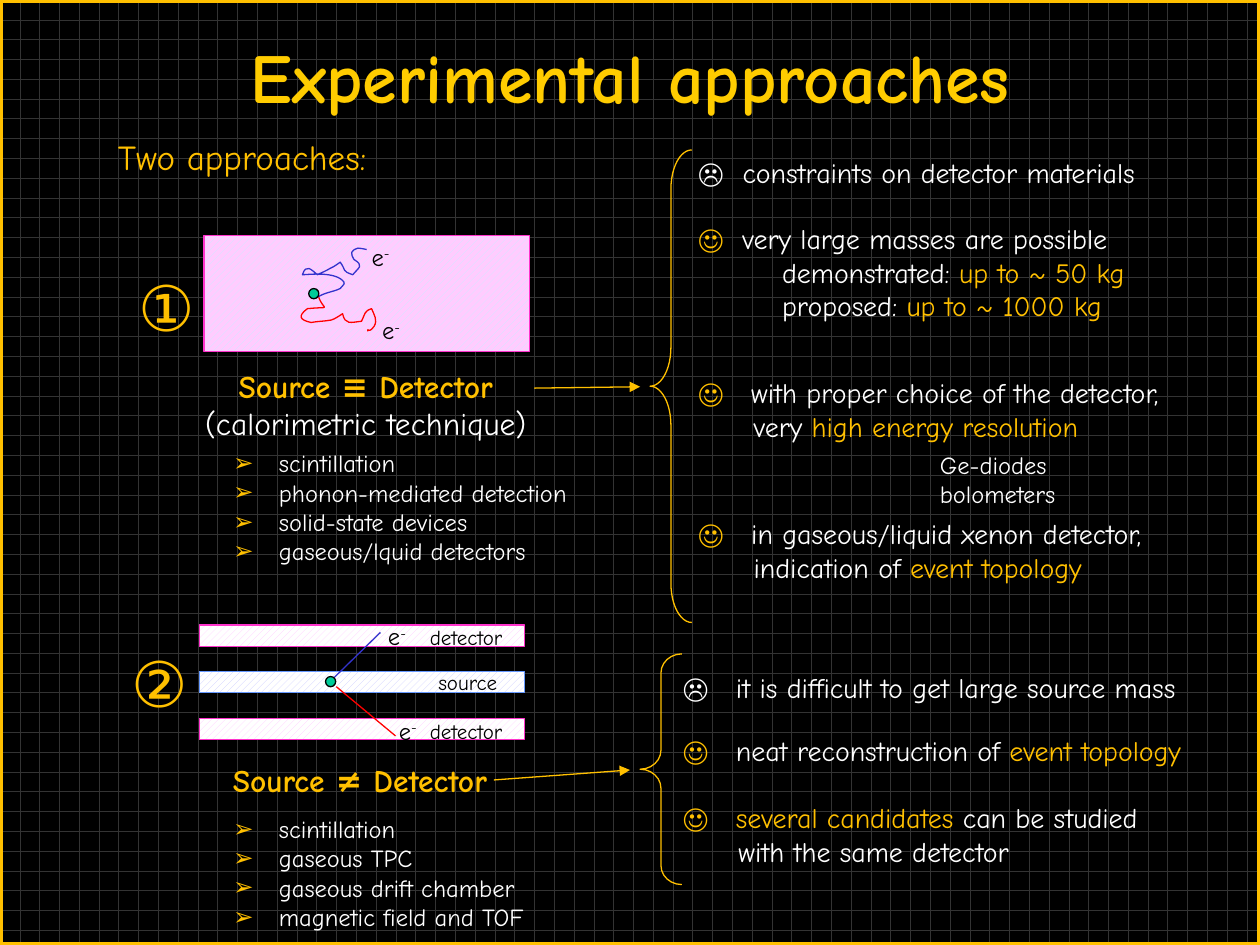
from lxml.etree import SubElement
from pptx import Presentation
from pptx.dml.color import RGBColor
from pptx.enum.dml import MSO_PATTERN
from pptx.enum.shapes import MSO_CONNECTOR, MSO_SHAPE
from pptx.enum.text import MSO_ANCHOR, MSO_AUTO_SIZE, PP_ALIGN
from pptx.oxml.ns import qn
from pptx.util import Pt

GOLD, WHITE, BLACK = "FFC000", "FFFFFF", "000000"
BLUE, RED, PINK, GREEN = "3333CC", "FF0000", "FF33CC", "00CC99"
FONT = "Comic Neue"

TITLE = "Experimental approaches"
TECHNIQUES = [
    ((126, 252.5, 214, 75), ["scintillation", "phonon-mediated detection",
                             "solid-state devices", "gaseous/lquid detectors"]),
    ((126, 461.5, 189, 75), ["scintillation", "gaseous TPC",
                             "gaseous drift chamber", "magnetic field and TOF"]),
]
HAPPY, SAD = ("☺\t", GOLD), ("☹\t", WHITE)
REMARKS = [
    ((391.9, 85.5, 292, 27), 25.3, [(0, [SAD, ("constraints on detector materials", WHITE)])]),
    ((391.9, 123.1, 271, 66), 25.3, [
        (0, [HAPPY, ("very large masses are possible", WHITE)]),
        (22.7, [("demonstrated: ", WHITE), ("up to ~ 50 kg", GOLD)]),
        (22.7, [("proposed: ", WHITE), ("up to ~ 1000 kg", GOLD)])]),
    ((391.9, 211, 311, 46), 30.3, [
        (0, [HAPPY, ("with proper choice of the detector,", WHITE)]),
        (1.4, [("very ", WHITE), ("high energy resolution", GOLD)])]),
    ((391.9, 291.6, 292, 46), 30.3, [
        (0, [HAPPY, ("in gaseous/liquid xenon detector,", WHITE)]),
        (1.4, [("indication of ", WHITE), ("event topology", GOLD)])]),
    ((383.2, 379.4, 330, 27), 30.3, [
        (0, [SAD, ("it is difficult to get large source mass", WHITE)])]),
    ((383.2, 415.4, 327, 27), 30.3, [
        (0, [HAPPY, ("neat reconstruction of ", WHITE), ("event topology", GOLD)])]),
    ((383.2, 453.9, 302, 46), 30.3, [
        (0, [HAPPY, ("several candidates ", GOLD), ("can be studied", WHITE)]),
        (1.4, [("with the same detector", WHITE)])]),
]
LABELS = [
    ((60.3, 74, 171, 32), 20, GOLD, ["Two approaches:"]),
    ((72, 149.8, 47, 50), 36, GOLD, ["①"]),
    ((68, 365, 47, 50), 36, GOLD, ["②"]),
    ((530, 253.4, 89, 41), 14, WHITE, ["Ge-diodes", "bolometers"]),
]
ELECTRONS = [(205.2, 134.6), (211.2, 176.4), (214.6, 351.4), (220.8, 405.4)]
SLABS = [("detector", 238.5, -3.6, "FFCCFF", PINK),
         ("source", 243.4, -4.8, "CCCCFF", "6699FF"),
         ("detector", 238.5, -3.6, "FFCCFF", PINK)]
SLAB_LEFT, SLAB_TOP, SLAB_PITCH, SLAB_WIDTH, SLAB_HEIGHT = 113.8, 357.1, 26.65, 185.8, 12.2
BRACES = [((371.5, 85.7, 23.8, 270), 0.938), ((365.8, 373.7, 23.8, 131.8), 0.458)]
LINES = [((305.3, 221.8), (365.8, 221), GOLD, True),
         ((282.2, 445.7), (360, 440), GOLD, True),
         ((188.6, 389.5), (217.4, 361.4), BLUE, False),
         ((192.2, 392.4), (226, 420.5), RED, False)]
DECAY_POINTS = [(176.4, 164.9), (186, 386.6)]
TRACKS = [
    (BLUE, [(181.4, 169.9),
            (185.8, 167), (190.1, 167), (194.4, 164.9),
            (195.1, 163.4), (197.3, 162.7), (196.6, 161.3),
            (192.2, 154.8), (175.7, 157), (172.8, 157),
            (175, 150.5), (177.8, 154.1), (181.4, 157),
            (184.3, 155.5), (185, 155.5), (188.6, 153.4),
            (190.8, 152.6), (194.4, 149.8), (194.4, 149.8),
            (198, 154.8), (195.1, 154.8), (201.6, 157),
            (205.2, 152.6), (208.1, 151.9), (202.3, 148.3),
            (200.2, 144.7), (200.2, 143.3), (204.5, 141.8),
            (205.9, 141.8), (209.5, 142.6), (209.5, 142.6)]),
    (RED, [(182.2, 169.9),
           (185, 177.8), (190.1, 175), (175.7, 176.4),
           (169.9, 180.7), (171.4, 182.9), (177.8, 184.3),
           (181.4, 183.6), (185.8, 183.6), (189.4, 182.9),
           (191.5, 182.2), (193.7, 180.7), (195.8, 179.3),
           (197.3, 185.8), (200.2, 184.3), (206.6, 183.6),
           (208.8, 179.3), (208.1, 177.8), (212.4, 176.4),
           (213.8, 180), (216, 182.9), (213.8, 186.5),
           (210.2, 191.5), (210.2, 186.5), (210.2, 189.4)]),
]


def color(hex_text):
    return RGBColor.from_string(hex_text)


def points(values):
    return [Pt(value) for value in values]


def pattern(fill, kind, fore, back):
    fill.patterned()
    fill.pattern = kind
    fill.fore_color.rgb, fill.back_color.rgb = color(fore), color(back)


def outline(item, hex_text, width=0.75):
    item.line.color.rgb = color(hex_text)
    item.line.width = Pt(width)


def preset(kind, box, line, width=0.75):
    item = slide.shapes.add_shape(kind, *points(box))
    item.shadow.inherit = False
    item.fill.background()
    outline(item, line, width)
    return item


def place(holder, box):
    holder.left, holder.top, holder.width, holder.height = points(box)
    frame = holder.text_frame
    settings = {"word_wrap": True, "auto_size": MSO_AUTO_SIZE.NONE,
                "vertical_anchor": MSO_ANCHOR.TOP}
    for key, value in settings.items():
        setattr(frame, key, value)
    return frame


def write(frame, size, paragraphs, align=PP_ALIGN.LEFT, bullet=None):
    for index, (margin, hanging, runs) in enumerate(paragraphs):
        paragraph = frame.add_paragraph() if index else frame.paragraphs[0]
        paragraph.alignment = align
        paragraph.space_before = Pt(0)
        properties = paragraph._p.get_or_add_pPr()
        properties.set("marL", str(Pt(margin)))
        properties.set("indent", str(-Pt(hanging)))
        if bullet:
            bullet_color = SubElement(properties, qn("a:buClr"))
            SubElement(bullet_color, qn("a:srgbClr"), val=GOLD)
            SubElement(properties, qn("a:buChar"), char=bullet)
        else:
            SubElement(properties, qn("a:buNone"))
        for text, hex_text, *bold in runs:
            run = paragraph.add_run()
            run.text = text
            settings = {"name": FONT, "size": Pt(size), "bold": bool(bold)}
            for key, value in settings.items():
                setattr(run.font, key, value)
            run.font.color.rgb = color(hex_text)


def label(box, size, paragraphs, align=PP_ALIGN.LEFT):
    frame = place(slide.shapes.add_textbox(*points(box)), box)
    write(frame, size, [(0, 0, runs) for runs in paragraphs], align)
    return frame


def draw_track(hex_text, track):
    start, *rest = [points(point) for point in track]
    builder = slide.shapes.build_freeform(*start, scale=1.0)
    builder.add_line_segments(rest[2::3], close=False)
    electron_track = builder.convert_to_shape()
    electron_track.shadow.inherit = False
    electron_track.fill.background()
    outline(electron_track, hex_text)
    left, top = electron_track.left, electron_track.top
    segments = list(electron_track._element.iter(qn("a:lnTo")))
    for index, segment in enumerate(segments):
        curve = segment.makeelement(qn("a:cubicBezTo"))
        for x, y in rest[3 * index:3 * index + 3]:
            SubElement(curve, qn("a:pt"), x=str(x - left), y=str(y - top))
        segment.getparent().replace(segment, curve)


deck = Presentation()
deck.slide_width, deck.slide_height = Pt(720), Pt(540)
slide = deck.slides.add_slide(deck.slide_layouts[3])
pattern(slide.background.fill, MSO_PATTERN.DOTTED_GRID, "333333", BLACK)
title, *technique_lists = slide.placeholders

write(place(title, (37.2, 15.8, 645.8, 90)), 40,
      [(0, 0, [(TITLE, "FFCC00", True)])], PP_ALIGN.CENTER)
for holder, (box, techniques) in zip(technique_lists, TECHNIQUES):
    write(place(holder, box), 14,
          [(26.2, 26.2, [(technique, WHITE)]) for technique in techniques], bullet="➢")

preset(MSO_SHAPE.RECTANGLE, (0, 0, 720, 540), GOLD, 3)
calorimeter = preset(MSO_SHAPE.RECTANGLE, (116.6, 134.6, 185.8, 66.2), PINK)
pattern(calorimeter.fill, MSO_PATTERN.WIDE_UPWARD_DIAGONAL, "CCECFF", "FFCCFF")

for index, (name, label_left, label_shift, stripe, edge) in enumerate(SLABS):
    top = SLAB_TOP + index * SLAB_PITCH
    slab = preset(MSO_SHAPE.RECTANGLE, (SLAB_LEFT, top, SLAB_WIDTH, SLAB_HEIGHT), edge)
    pattern(slab.fill, MSO_PATTERN.WIDE_UPWARD_DIAGONAL, stripe, WHITE)
    label((label_left, top + label_shift, 65, 21.6), 12, [[(name, BLACK)]])

for hex_text, track in TRACKS:
    draw_track(hex_text, track)

for start, end, hex_text, arrow in LINES:
    connector = slide.shapes.add_connector(MSO_CONNECTOR.STRAIGHT, *points(start + end))
    outline(connector, hex_text)
    if arrow:
        SubElement(connector.line._get_or_add_ln(), qn("a:tailEnd"), type="triangle")
    SubElement(connector._element.spPr, qn("a:effectLst"))

for left, top in DECAY_POINTS:
    decay = preset(MSO_SHAPE.OVAL, (left, top, 5.8, 5.8), BLACK)
    decay.fill.solid()
    decay.fill.fore_color.rgb = color(GREEN)

for left, top in ELECTRONS:
    electron = label((left, top, 26, 24.5), 14, [[("e", BLACK), ("-", BLACK)]])
    charge = electron.paragraphs[0].runs[1]
    charge._r.get_or_add_rPr().set("baseline", "30000")

for box, size, hex_text, texts in LABELS:
    label(box, size, [[(text, hex_text)] for text in texts])
label((100, 206, 218, 51), 18, [[("Source ≡ Detector", GOLD, True)],
                                [("(calorimetric technique)", WHITE)]], PP_ALIGN.CENTER)
label((126, 431.3, 179, 29), 18, [[("Source ≠ Detector", GOLD, True)]])

for box, indent, remarks in REMARKS:
    frame = place(slide.shapes.add_textbox(*points(box)), box)
    write(frame, 16, [(indent + shift, 0 if shift else indent, runs)
                      for shift, runs in remarks])

for box, curl in BRACES:
    brace = preset(MSO_SHAPE.LEFT_BRACE, box, GOLD)
    brace.adjustments[0] = curl

deck.save("out.pptx")
